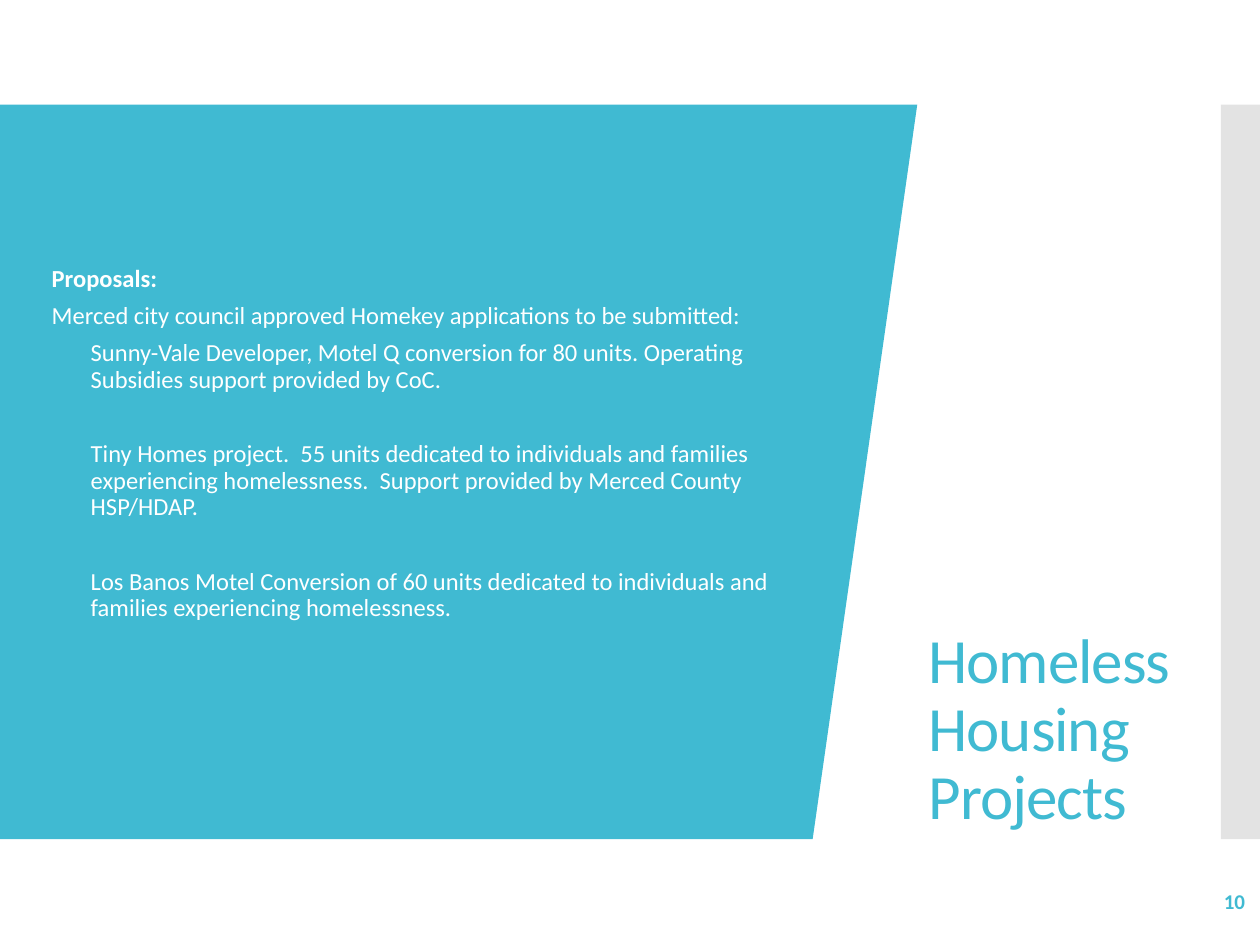
from pptx import Presentation
from pptx.dml.color import RGBColor
from pptx.enum.shapes import MSO_SHAPE
from pptx.enum.text import MSO_ANCHOR, MSO_AUTO_SIZE, PP_ALIGN
from pptx.oxml.ns import qn
from pptx.util import Inches, Pt
from lxml.etree import SubElement

TEAL = RGBColor(0x40, 0xBA, 0xD2)
GRAY = RGBColor(0xC8, 0xC8, 0xC8)
WHITE = RGBColor(0xFF, 0xFF, 0xFF)
TOP, HIGH = 0.83, 5.83


def place(shape, left, top, width, height):
    shape.left, shape.top = Inches(left), Inches(top)
    shape.width, shape.height = Inches(width), Inches(height)


def style(para, size, color, bold=False):
    font = para.font
    font.name, font.size, font.bold = "Calibri", Pt(size), bold
    font.color.rgb = color


deck = Presentation()
deck.slide_width, deck.slide_height = Inches(10), Inches(7.5)
slide = deck.slides.add_slide(deck.slide_layouts[1])
shapes = slide.shapes
title, body = slide.placeholders

# Slanted panel, sent behind the text
pen = shapes.build_freeform(0, Inches(TOP), scale=1.0)
edge = [(7.28, TOP), (6.45, TOP + HIGH), (0, TOP + HIGH)]
pen.add_line_segments([(Inches(x), Inches(y)) for x, y in edge])
panel = pen.convert_to_shape()
panel.fill.solid()
panel.fill.fore_color.rgb = TEAL
panel.line.fill.background()
panel.shadow.inherit = False
shapes._spTree.insert(2, panel._element)

# Half-clear bar at the right edge
bar = shapes.add_shape(MSO_SHAPE.RECTANGLE, Inches(9.69), Inches(TOP),
                       Inches(0.31), Inches(HIGH))
bar.fill.solid()
bar.fill.fore_color.rgb = GRAY
tint = bar._element.spPr.find(qn("a:solidFill"))[0]
SubElement(tint, qn("a:alpha"), val="50000")
bar.line.fill.background()
bar.shadow.inherit = False

# Title
place(title, 7.27, TOP, 2.29, HIGH)
frame = title.text_frame
frame.text = "Homeless Housing Projects"
frame.auto_size = MSO_AUTO_SIZE.NONE
frame.vertical_anchor = MSO_ANCHOR.BOTTOM
para = frame.paragraphs[0]
para.alignment = PP_ALIGN.LEFT
para.line_spacing = 0.9
style(para, 36, TEAL)
para.runs[0].font._element.set("spc", "-60")

# Proposals: text, left indent, space after, bold
items = [
    ("Proposals:", 0.06, 6, True),
    ("Merced city council approved Homekey applications to be submitted:",
     0.06, 6, False),
    ("Sunny-Vale Developer, Motel Q conversion for 80 units. Operating "
     "Subsidies support provided by CoC.", 0.37, 27.4, False),
    ("Tiny Homes project.  55 units dedicated to individuals and families "
     "experiencing homelessness.  Support provided by Merced County HSP/HDAP.",
     0.37, 27.4, False),
    ("Los Banos Motel Conversion of 60 units dedicated to individuals and "
     "families experiencing homelessness.", 0.37, 0, False),
]
place(body, 0.25, 0.94, 6.17, 5.6)
frame = body.text_frame
frame.auto_size = MSO_AUTO_SIZE.NONE
frame.vertical_anchor = MSO_ANCHOR.MIDDLE
frame.margin_bottom = Inches(0.48)
for i, (text, left, gap, bold) in enumerate(items):
    para = frame.add_paragraph() if i else frame.paragraphs[0]
    para.text = text
    para.line_spacing = 0.9
    para.space_before, para.space_after = Pt(0), Pt(gap)
    props = para._p.get_or_add_pPr()
    props.set("marL", str(Inches(left)))
    props.set("indent", "0")
    SubElement(props, qn("a:buNone"))
    style(para, 14, WHITE, bold)

# Page number
page = shapes.add_textbox(Inches(8.72), Inches(6.95), Inches(1.26), Inches(0.4))
frame = page.text_frame
frame.word_wrap = True
frame.vertical_anchor = MSO_ANCHOR.MIDDLE
para = frame.paragraphs[0]
para.text = "10"
para.alignment = PP_ALIGN.RIGHT
style(para, 12, TEAL, True)

deck.save("out.pptx")
